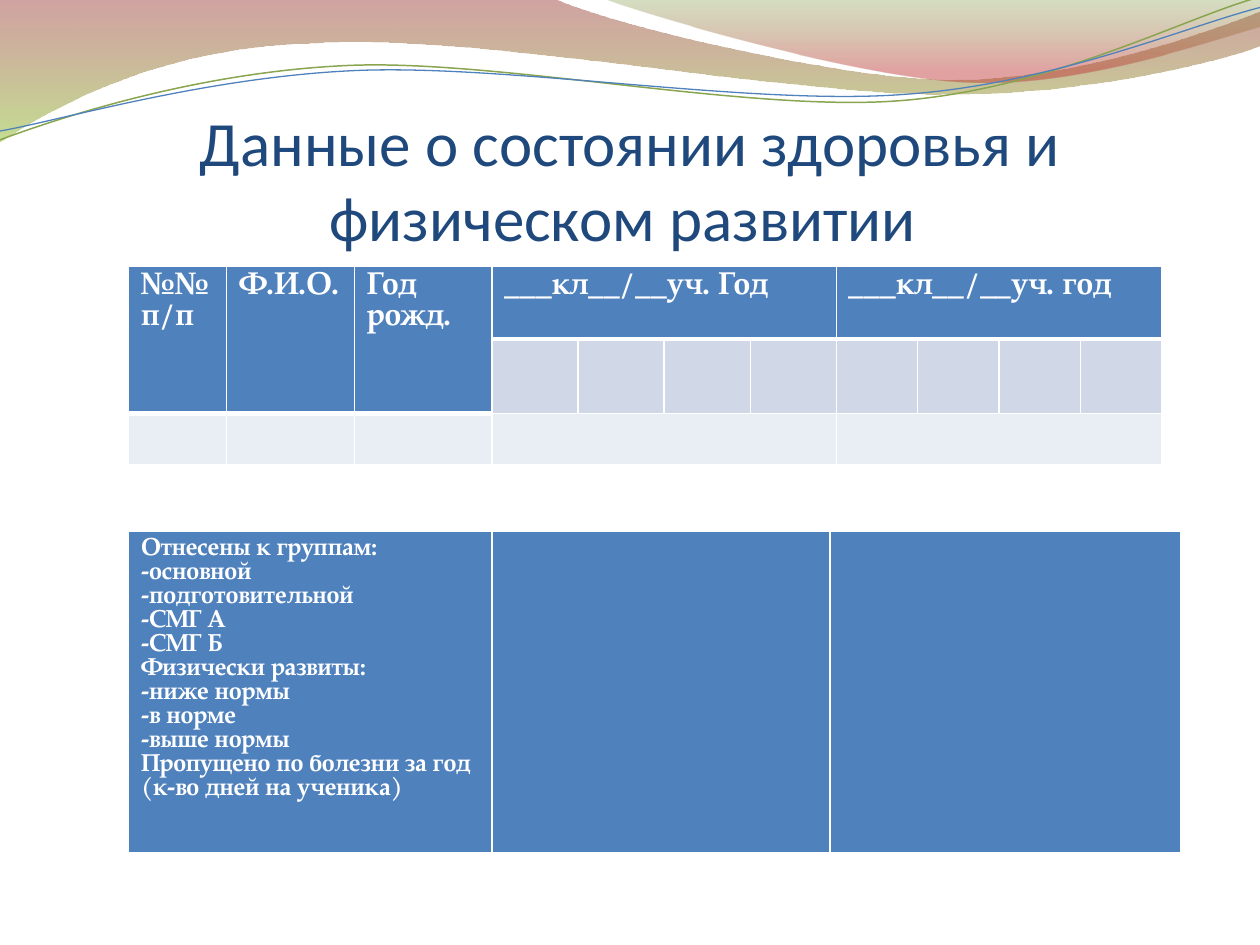
from dataclasses import dataclass
from math import cos, radians, sin
from typing import Optional

from lxml.etree import SubElement
from pptx import Presentation
from pptx.dml.color import RGBColor
from pptx.enum.text import MSO_ANCHOR, PP_ALIGN
from pptx.oxml import parse_xml
from pptx.oxml.ns import nsdecls, qn
from pptx.util import Pt

COLORS = {
    "title": "1F497D", "header": "4F81BD", "band": "D0D8E8", "row": "E9EDF4",
    "white": "FFFFFF", "green line": "89A54F", "blue line": "4F81BD",
    "red": "973330", "lime": "95C238", "olive": "769537", "rose": "BE3330",
}
TABLE_FONT = "TeX Gyre Pagella"
HEADER_BORDERS = {"a:lnL": 1, "a:lnR": 1, "a:lnT": 1, "a:lnB": 3}
UNITS_PER_POINT = 100

Point = tuple[float, float]


@dataclass
class GradientStop:
    position: int
    color: str
    opacity: int


@dataclass
class Wave:
    """Segments hold one point for a line, three for a Bezier curve."""
    start: Point
    segments: list[list[Point]]
    stops: Optional[list[GradientStop]] = None
    line: str = ""
    width: float = 0
    rotation: float = 0
    center: Point = (0, 0)


@dataclass
class HeaderCell:
    column: int
    text: str
    rows: int
    columns: int


WAVES = [
    Wave((0, 0), [
        [(316.8, -0.7)],
        [(342.7, 12.2), (478.1, 45.4), (545.8, 45.4)],
        [(614.2, 45.4), (689.8, 18.7), (720, 6.5)],
        [(720.7, 25.9)],
        [(707.8, 31.7), (626.4, 54.7), (537.1, 54)],
        [(447.8, 54), (275, 20.2), (185, 24.5)],
        [(92.9, 25.9), (33.1, 59.8), (-0.7, 81.4)],
        [(0, 0)],
    ], [GradientStop(0, "red", 45), GradientStop(100, "lime", 55)]),
    Wave((344.9, -0.7), [
        [(366.5, 7.9), (491, 44.6), (553.7, 46.8)],
        [(616.3, 49.7), (691.9, 23), (720, 15.1)],
        [(720, 0)],
        [(344.9, -0.7)],
    ], [GradientStop(0, "olive", 30), GradientStop(80, "rose", 45)]),
    Wave((0, 79.9), [
        [(34.6, 67), (113.8, 41), (199.4, 37.4)],
        [(284.4, 33.8), (427, 64.1), (513.4, 57.6)],
        [(599.8, 51.1), (675.4, 10.8), (718.6, -1.4)],
    ], line="green line", width=0.85, rotation=357.3, center=(359.3, 41.4)),
    Wave((0, 74.9), [
        [(33.8, 69.1), (118.1, 43.9), (203.8, 40.3)],
        [(290.2, 36.7), (429.8, 60.5), (516.2, 54)],
        [(601.9, 48.2), (677.5, 15.1), (720, 4.3)],
    ], line="blue line", width=0.75, rotation=357.3, center=(359.6, 42.5)),
]

HEADERS = [
    HeaderCell(0, "№№\nп/п", 2, 1),
    HeaderCell(1, "Ф.И.О.", 2, 1),
    HeaderCell(2, "Год\nрожд.", 2, 1),
    HeaderCell(3, "___кл__/__уч. Год", 1, 4),
    HeaderCell(7, "___кл__/__уч. год", 1, 4),
]
GROUPS = "\n".join([
    "Отнесены к группам:", "-основной", "-подготовительной", "-СМГ А", "-СМГ Б",
    "Физически развиты:", "-ниже нормы", "-в норме", "-выше нормы",
    "Пропущено по болезни за год (к-во дней на ученика)",
])


def rgb(name: str) -> RGBColor:
    return RGBColor.from_string(COLORS[name])


def format_font(font, color: str, **values) -> None:
    for name, value in values.items():
        setattr(font, name, value)
    font.color.rgb = rgb(color)


def local_point(wave: Wave, point: Point) -> Point:
    """Undo the wave's rotation and convert to drawing units."""
    angle = radians(-wave.rotation)
    dx, dy = point[0] - wave.center[0], point[1] - wave.center[1]
    x = wave.center[0] + dx * cos(angle) - dy * sin(angle)
    y = wave.center[1] + dx * sin(angle) + dy * cos(angle)
    return x * UNITS_PER_POINT, y * UNITS_PER_POINT


def bend_segments(shape, segments: list[list[Point]]) -> None:
    """Join each run of three line points into one Bezier curve."""
    lines = iter(list(shape._element.iter(qn("a:lnTo"))))
    for segment in segments:
        nodes = [next(lines) for _ in segment]
        if len(nodes) == 3:
            curve = parse_xml(f'<a:cubicBezTo {nsdecls("a")}/>')
            nodes[0].addprevious(curve)
            for node in nodes:
                curve.append(node[0])
                node.getparent().remove(node)


def fill_gradient(shape, stops: list[GradientStop]) -> None:
    """Fill from top to bottom with translucent colours."""
    gradient = parse_xml(f'<a:gradFill {nsdecls("a")} rotWithShape="1"/>')
    stop_list = SubElement(gradient, qn("a:gsLst"))
    for stop in stops:
        node = SubElement(stop_list, qn("a:gs"), pos=str(stop.position * 1000))
        color = SubElement(node, qn("a:srgbClr"), val=COLORS[stop.color])
        SubElement(color, qn("a:alpha"), val=str(stop.opacity * 1000))
    SubElement(gradient, qn("a:lin"), ang="5400000", scaled="0")
    shape._element.spPr.find(qn("a:custGeom")).addnext(gradient)


def draw_wave(slide, wave: Wave) -> None:
    builder = slide.shapes.build_freeform(*local_point(wave, wave.start),
                                          scale=Pt(1) / UNITS_PER_POINT)
    builder.add_line_segments([local_point(wave, point) for segment in wave.segments
                               for point in segment], close=wave.stops is not None)
    shape = builder.convert_to_shape()
    bend_segments(shape, wave.segments)
    shape.rotation = wave.rotation
    shape.shadow.inherit = False
    if wave.stops:
        fill_gradient(shape, wave.stops)
        shape.line.fill.background()
    else:
        shape.fill.background()
        shape.line.color.rgb = rgb(wave.line)
        shape.line.width = Pt(wave.width)


def draw_table(slide, left: float, top: float, widths: list[float],
               heights: list[float], fills: list[str]):
    """Add a table with one fill per row."""
    table = slide.shapes.add_table(len(heights), len(widths), Pt(left), Pt(top),
                                   Pt(sum(widths)), Pt(sum(heights))).table
    for column, width in zip(table.columns, widths):
        column.width = Pt(width)
    for row, height, fill in zip(table.rows, heights, fills):
        row.height = Pt(height)
        for cell in row.cells:
            cell.fill.solid()
            cell.fill.fore_color.rgb = rgb(fill)
    return table


def draw_borders(cell) -> None:
    properties = cell._tc.get_or_add_tcPr()
    for index, (tag, width) in enumerate(HEADER_BORDERS.items()):
        border = parse_xml(f'<{tag} {nsdecls("a")} w="{Pt(width)}"/>')
        fill = SubElement(border, qn("a:solidFill"))
        SubElement(fill, qn("a:srgbClr"), val=COLORS["white"])
        properties.insert(index, border)


def write_cell(cell, text: str, size: float) -> None:
    cell.text = text
    for paragraph in cell.text_frame.paragraphs:
        format_font(paragraph.runs[0].font, "white",
                    name=TABLE_FONT, size=Pt(size), bold=True)


def draw_title(slide, text: str) -> None:
    title = slide.shapes.title
    slide.shapes._spTree.append(title._element)
    box = {"left": 36, "top": 55.4, "width": 648, "height": 90}
    for name, value in box.items():
        setattr(title, name, Pt(value))
    frame = title.text_frame
    frame.text = text
    layout = {"vertical_anchor": MSO_ANCHOR.BOTTOM, "word_wrap": True,
              "margin_left": 0, "margin_right": 0,
              "margin_top": Pt(3.6), "margin_bottom": 0}
    for name, value in layout.items():
        setattr(frame, name, value)
    paragraph = frame.paragraphs[0]
    paragraph.alignment = PP_ALIGN.CENTER
    format_font(paragraph.runs[0].font, "title", name="Calibri", size=Pt(36))


def main() -> None:
    presentation = Presentation()
    presentation.slide_width, presentation.slide_height = Pt(720), Pt(540)
    slide = presentation.slides.add_slide(presentation.slide_layouts[5])
    for wave in WAVES:
        draw_wave(slide, wave)
    draw_title(slide, "Данные о состоянии здоровья и физическом развитии ")

    health = draw_table(slide, 73.4, 152, [56.1, 73, 78.7] + [49.2] * 4 + [46.5] * 4,
                        [41.8, 42.2, 29.5], ["header", "band", "row"])
    for header in HEADERS:
        cell = health.cell(0, header.column)
        last = header.column + header.columns - 1
        for row in range(header.rows):
            for column in range(header.column, last + 1):
                draw_borders(health.cell(row, column))
        cell.merge(health.cell(header.rows - 1, last))
        write_cell(cell, header.text, 18)
        if header.columns > 1:
            health.cell(2, header.column).merge(health.cell(2, last))

    groups = draw_table(slide, 73.4, 303.8, [207.8, 193, 200.6], [184.4], ["header"])
    for cell in groups.iter_cells():
        draw_borders(cell)
    write_cell(groups.cell(0, 0), GROUPS, 14)
    presentation.save("out.pptx")


if __name__ == "__main__":
    main()
